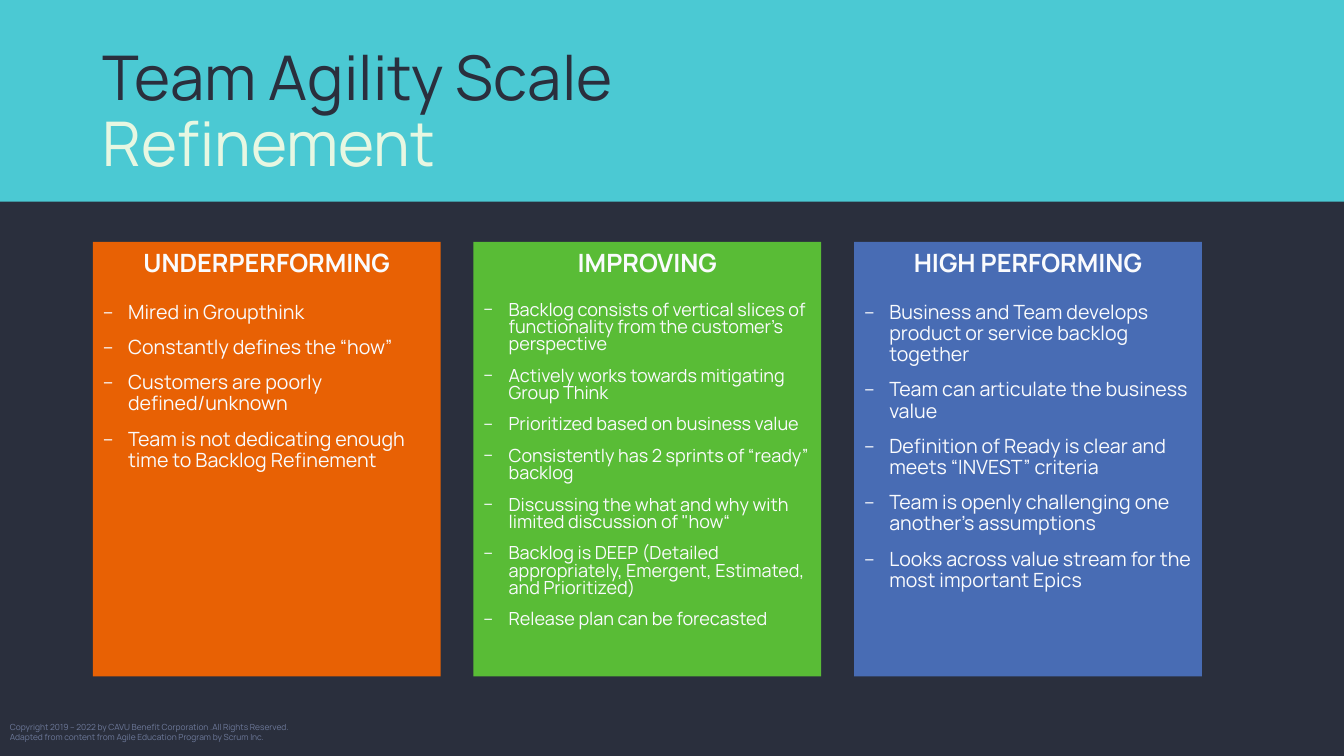
from dataclasses import dataclass

from lxml.etree import SubElement
from pptx import Presentation
from pptx.dml.color import RGBColor
from pptx.enum.shapes import MSO_SHAPE
from pptx.enum.text import MSO_ANCHOR, MSO_AUTO_SIZE, PP_ALIGN
from pptx.oxml.ns import qn
from pptx.util import Inches, Pt


@dataclass(frozen=True)
class Theme:
    """Colours, font and type sizes of the slide."""
    font: str = "Manrope"
    dark: str = "2A2F3D"
    band: str = "4BC9D3"
    accent: str = "E7F7E2"
    light: str = "FAFBFD"
    muted: str = "6E7A9B"
    orange: str = "E86104"
    green: str = "59BC36"
    blue: str = "486CB4"
    title_size: float = 44
    heading_size: float = 18
    list_size: float = 14
    dense_size: float = 12.9
    notice_size: float = 6


class ScaleSlide:
    """Draws the parts of the agility scale on one slide."""

    def __init__(self, slide, theme):
        self.slide = slide
        self.theme = theme
        self.paint(slide.background, theme.dark)

    def paint(self, target, color):
        target.fill.solid()
        target.fill.fore_color.rgb = RGBColor.from_string(color)

    def add_text(self, paragraph, text, size, color, bold=False):
        run = paragraph.add_run()
        run.text = text
        run.font.name = self.theme.font
        run.font.size = Pt(size)
        run.font.bold = bold
        run.font.color.rgb = RGBColor.from_string(color)

    def place(self, shape, left, top, width, height):
        shape.left, shape.top = Inches(left), Inches(top)
        shape.width, shape.height = Inches(width), Inches(height)

    def block(self, left, top, width, height, color):
        block = self.slide.shapes.add_shape(
            MSO_SHAPE.RECTANGLE, Inches(left), Inches(top), Inches(width), Inches(height))
        block.shadow.inherit = False
        self.paint(block, color)
        block.line.fill.background()
        return block

    def title(self, first, second):
        title = self.slide.shapes.title
        self.place(title, 0.92, 0.4, 11.5, 1.45)
        title.text_frame.auto_size = MSO_AUTO_SIZE.NONE
        title.text_frame.vertical_anchor = MSO_ANCHOR.MIDDLE
        paragraph = title.text_frame.paragraphs[0]
        paragraph.alignment = PP_ALIGN.LEFT
        paragraph.line_spacing = 0.9
        self.add_text(paragraph, first, self.theme.title_size, self.theme.dark)
        paragraph.add_line_break()
        self.add_text(paragraph, second, self.theme.title_size, self.theme.accent)

    def band(self):
        band = self.block(0, 0, 13.33, 2, self.theme.band)
        self.slide.shapes.title.element.addprevious(band.element)

    def heading(self, left, text, color):
        frame = self.block(left, 2.4, 3.45, 0.4, color).text_frame
        frame.word_wrap = True
        frame.paragraphs[0].alignment = PP_ALIGN.CENTER
        self.add_text(frame.paragraphs[0], text, self.theme.heading_size, self.theme.light, True)

    def dash(self, paragraph):
        properties = paragraph._p.get_or_add_pPr()
        properties.set("marL", str(Inches(0.25)))
        properties.set("indent", str(Inches(-0.25)))
        bullet_color = SubElement(properties, qn("a:buClr"))
        SubElement(bullet_color, qn("a:srgbClr"), val=self.theme.light)
        SubElement(properties, qn("a:buFont"), typeface=self.theme.font)
        SubElement(properties, qn("a:buChar"), char="–")

    def traits(self, body, left, items, color, size, spacing):
        self.place(body, left, 2.8, 3.45, 3.91)
        self.paint(body, color)
        frame = body.text_frame
        frame.auto_size = MSO_AUTO_SIZE.NONE
        frame.vertical_anchor = MSO_ANCHOR.TOP
        frame.margin_top = Inches(0.2)
        for number, item in enumerate(items):
            paragraph = frame.add_paragraph() if number else frame.paragraphs[0]
            self.dash(paragraph)
            paragraph.line_spacing = spacing
            paragraph.space_before = Pt(10 if number else 0)
            self.add_text(paragraph, item, size, self.theme.light)

    def notice(self, lines):
        notice = self.slide.shapes.add_textbox(Inches(0), Inches(7.11), Inches(4.5), Inches(0.3))
        frame = notice.text_frame
        frame.word_wrap = True
        for number, line in enumerate(lines):
            paragraph = frame.add_paragraph() if number else frame.paragraphs[0]
            self.add_text(paragraph, line, self.theme.notice_size, self.theme.muted)


def main():
    theme = Theme()
    levels = [
        ("UNDERPERFORMING", theme.orange, theme.list_size, 0.9, [
            "Mired in Groupthink",
            "Constantly defines the “how”",
            "Customers are poorly defined/unknown",
            "Team is not dedicating enough time to Backlog Refinement",
        ]),
        ("IMPROVING", theme.green, theme.dense_size, 0.8, [
            "Backlog consists of vertical slices of functionality from the customer’s perspective",
            "Actively works towards mitigating Group Think",
            "Prioritized based on business value",
            "Consistently has 2 sprints of “ready” backlog",
            "Discussing the what and why with limited discussion of \"how“",
            "Backlog is DEEP (Detailed appropriately, Emergent, Estimated, and Prioritized)",
            "Release plan can be forecasted",
        ]),
        ("HIGH PERFORMING", theme.blue, theme.list_size, 0.9, [
            "Business and Team develops product or service backlog together",
            "Team can articulate the business value",
            "Definition of Ready is clear and meets “INVEST” criteria",
            "Team is openly challenging one another’s assumptions",
            "Looks across value stream for the most important Epics",
        ]),
    ]
    deck = Presentation()
    deck.slide_width, deck.slide_height = Inches(13.33), Inches(7.5)
    slide = deck.slides.add_slide(deck.slide_layouts.get_by_name("Comparison"))
    scale = ScaleSlide(slide, theme)
    scale.band()
    scale.title("Team Agility Scale", "Refinement")
    _, *bodies, spare = slide.placeholders
    spare.element.getparent().remove(spare.element)
    for column, (body, level) in enumerate(zip(bodies, levels)):
        name, color, size, spacing, items = level
        left = 0.92 + column * 3.775
        scale.heading(left, name, color)
        scale.traits(body, left, items, color, size, spacing)
    scale.notice([
        "Copyright 2019 – 2022 by CAVU Benefit Corporation .All Rights Reserved.",
        "Adapted from content from Agile Education Program by Scrum Inc.",
    ])
    deck.save("out.pptx")


if __name__ == "__main__":
    main()
